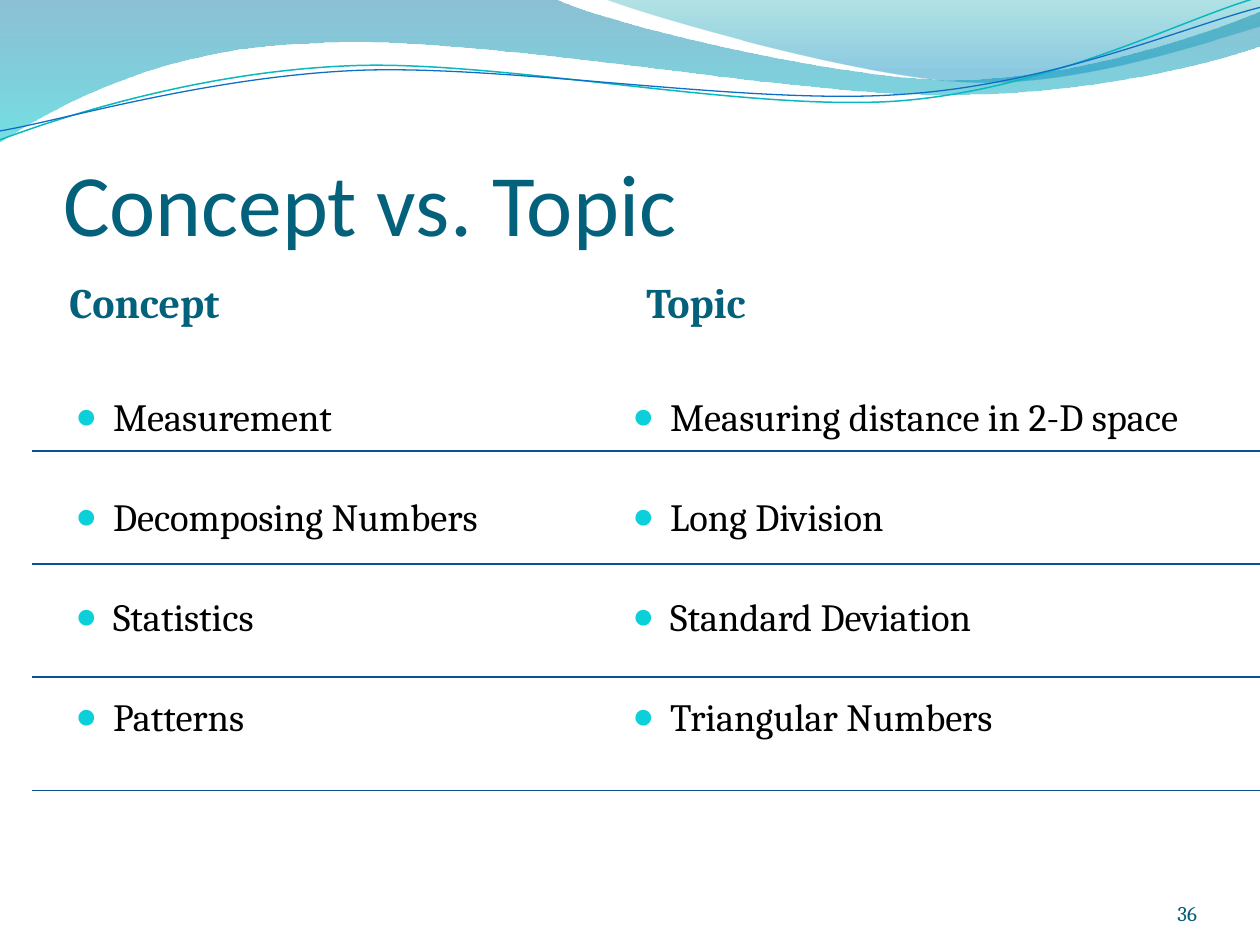
import pptx
import pptx.util
import pptx.dml.color
import pptx.enum.text
import pptx.enum.shapes
import pptx.oxml.ns
import lxml.etree

Cm, Pt = pptx.util.Cm, pptx.util.Pt
RGB = pptx.dml.color.RGBColor
ANCHOR = pptx.enum.text.MSO_ANCHOR
qn = pptx.oxml.ns.qn

TEAL = RGB(0x04, 0x61, 0x7B)
PAGE = RGB(0x04, 0x5D, 0x75)
BLACK = RGB(0, 0, 0)
RULE = RGB(0x09, 0x52, 0x95)
BULLET = RGB(0x0B, 0xD0, 0xD9)
CYAN = RGB(0x0A, 0xB8, 0xBF)
BLUE = RGB(0x0F, 0x6F, 0xC6)
DEEP = RGB(0x00, 0x74, 0xA1)
AQUA = RGB(0x00, 0xC6, 0xCF)
SEA = RGB(0x00, 0xA1, 0xA9)
SKY = RGB(0x00, 0x8B, 0xBF)

deck = pptx.Presentation()
deck.slide_width, deck.slide_height = Cm(25.4), Cm(19.05)
slide = deck.slides.add_slide(deck.slide_layouts[4])
shapes = slide.shapes


def draw(parts, closed):
    """Draw a path in cm; a part of six numbers is a Bezier curve."""
    x, y = parts[0]
    pen = shapes.build_freeform(Cm(x), Cm(y), scale=1.0)
    points = [(Cm(part[i]), Cm(part[i + 1]))
              for part in parts[1:] for i in range(0, len(part), 2)]
    pen.add_line_segments(points, close=closed)
    shape = pen.convert_to_shape()
    shape.shadow.inherit = False
    # Join each run of three lines into one curve
    lines = list(shape.element.spPr.iter(qn("a:lnTo")))
    for part in parts[1:]:
        count = len(part) // 2
        group, lines = lines[:count], lines[count:]
        if count == 3:
            group[0].tag = qn("a:cubicBezTo")
            for line in group[1:]:
                group[0].append(line[0])
                line.getparent().remove(line)
    return shape


def format_text(shape, box, inset, anchor, font, size, color, bold=False):
    shape.left, shape.top, shape.width, shape.height = map(Cm, box)
    frame = shape.text_frame
    frame.word_wrap = True
    frame.auto_size = pptx.enum.text.MSO_AUTO_SIZE.NONE
    frame.vertical_anchor = anchor
    (frame.margin_left, frame.margin_top,
     frame.margin_right, frame.margin_bottom) = map(Cm, inset)
    for para in frame.paragraphs:
        para.alignment = pptx.enum.text.PP_ALIGN.LEFT
        para.font.name, para.font.size = font, Pt(size)
        para.font.color.rgb, para.font.bold = color, bold


# Waves: path, then stops of (position, colour, opacity in percent)
bands = [
    ([(0, 0), (11.18, -0.03), (12.09, 0.43, 16.87, 1.6, 19.25, 1.6),
      (21.67, 1.6, 24.33, 0.66, 25.4, 0.23), (25.43, 0.91),
      (24.97, 1.12, 22.1, 1.93, 18.95, 1.91),
      (15.8, 1.91, 9.7, 0.71, 6.53, 0.86),
      (3.28, 0.91, 1.17, 2.11, -0.03, 2.87)],
     [(0, DEEP, 45), (1, AQUA, 55)]),
    ([(12.17, -0.03), (12.93, 0.28, 17.32, 1.57, 19.53, 1.65),
      (21.74, 1.75, 24.41, 0.81, 25.4, 0.53), (25.4, 0)],
     [(0, SEA, 30), (0.8, SKY, 45)]),
]
waves = []
for parts, stops in bands:
    band = draw(parts, True)
    band.line.fill.background()
    band.fill.gradient()
    band.fill.gradient_angle = 270
    for stop, (place, color, _) in zip(band.fill.gradient_stops, stops):
        stop.position, stop.color.rgb = place, color
    tints = band.element.spPr.iter(qn("a:srgbClr"))
    for tint, (_, _, alpha) in zip(tints, stops):
        lxml.etree.SubElement(tint, qn("a:alpha"), val=str(alpha * 1000))
    waves.append(band)

curves = [
    ([(-0.05, 2.22), (1.19, 1.82, 4.02, 1.04, 7.05, 1.06),
      (10.05, 1.07, 15.02, 2.37, 18.08, 2.29),
      (21.14, 2.2, 23.87, 0.91, 25.41, 0.55)], CYAN, 0.85),
    ([(-0.04, 2.04), (1.16, 1.9, 4.18, 1.15, 7.2, 1.16),
      (10.25, 1.18, 15.13, 2.25, 18.18, 2.16),
      (21.21, 2.1, 23.93, 1.06, 25.45, 0.75)], BLUE, 0.75),
]
for parts, color, width in curves:
    curve = draw(parts, False)
    curve.rotation = 357.3
    curve.fill.background()
    curve.line.color.rgb, curve.line.width = color, Pt(width)
    waves.append(curve)

# Send the waves behind the placeholders
tree = shapes.element
for spot, wave in enumerate(waves, 2):
    tree.insert(spot, wave.element)

# Title and the two columns
title = shapes.title
title.text_frame.text = "Concept vs. Topic"
format_text(title, (1.27, 1.95, 22.86, 3.18), (0, 0.13, 0, 0),
            ANCHOR.BOTTOM, "Calibri", 50, TEAL)

columns = [
    ("Concept", 1.27, 1.27, 11.23,
     ["Measurement", "Decomposing Numbers", "Statistics", "Patterns"]),
    ("Topic", 12.9, 12.5, 12.5,
     ["Measuring distance in 2-D space", "Long Division",
      "Standard Deviation", "Triangular Numbers"]),
]
bodies = list(slide.placeholders)[1:]
for (name, left, start, width, items), head, body in zip(
        columns, bodies[::2], bodies[1::2]):
    head.text_frame.text = name
    format_text(head, (left, 5.16, 11.23, 1.83), (0.13, 0, 0.13, 0),
                ANCHOR.MIDDLE, "Cambria", 24, TEAL, True)
    body.text_frame.text = "\n".join(items)
    format_text(body, (start, 6.99, width, 10.69), (0.25, 0, 0.25, 0.13),
                ANCHOR.TOP, "Cambria", 22, BLACK)
    for para in body.text_frame.paragraphs:
        para.line_spacing = 2.0
        props = para._p.get_or_add_pPr()
        props.set("marL", str(Cm(0.76)))
        props.set("indent", str(-Cm(0.76)))
        tint = lxml.etree.SubElement(props, qn("a:buClr"))
        lxml.etree.SubElement(tint, qn("a:srgbClr"), val=str(BULLET))
        lxml.etree.SubElement(props, qn("a:buSzPct"), val="95000")
        lxml.etree.SubElement(props, qn("a:buChar"), char="●")
        # Bullet marks must come before the default run settings
        props.append(props.find(qn("a:defRPr")))

page = shapes.add_textbox(0, 0, 0, 0)
page.text_frame.text = "36"
format_text(page, (22.02, 17.65, 2.11, 1.02), (0, 0, 0, 0),
            ANCHOR.BOTTOM, "Cambria", 12, PAGE)
page.text_frame.paragraphs[0].alignment = pptx.enum.text.PP_ALIGN.RIGHT

# Row rules
for row in range(4):
    y = Cm(9.09 + 2.28 * row)
    rule = shapes.add_connector(pptx.enum.shapes.MSO_CONNECTOR.STRAIGHT,
                                Cm(0.64), y, Cm(25.63), y)
    rule.line.color.rgb, rule.line.width = RULE, Pt(0.75)
    lxml.etree.SubElement(rule.element.spPr, qn("a:effectLst"))

deck.save("out.pptx")
